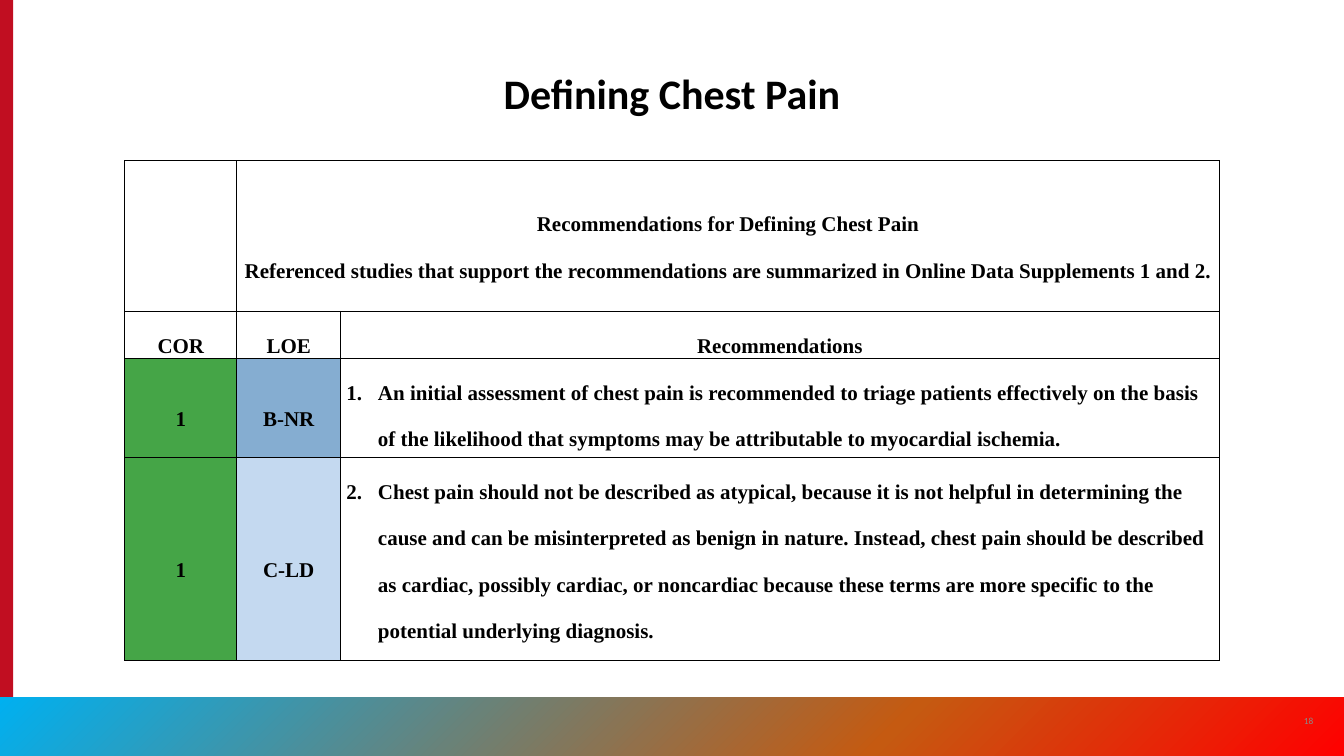
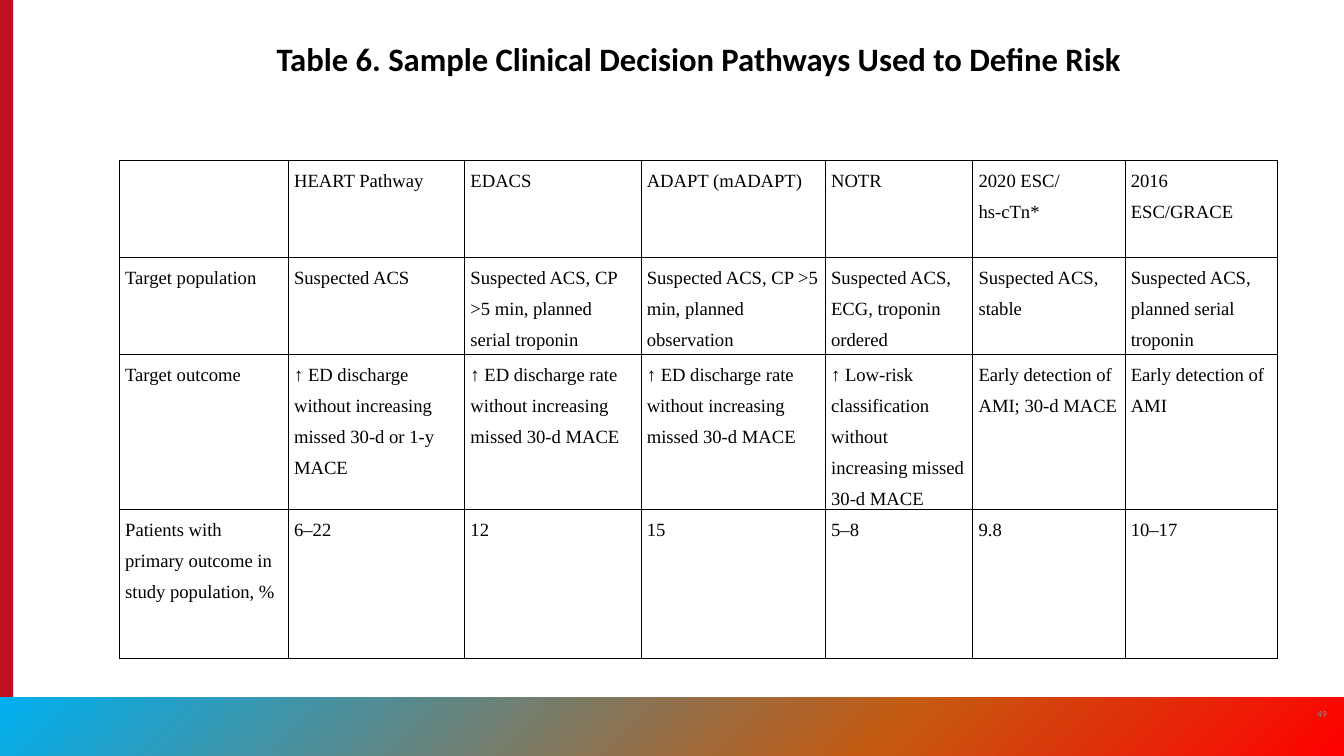
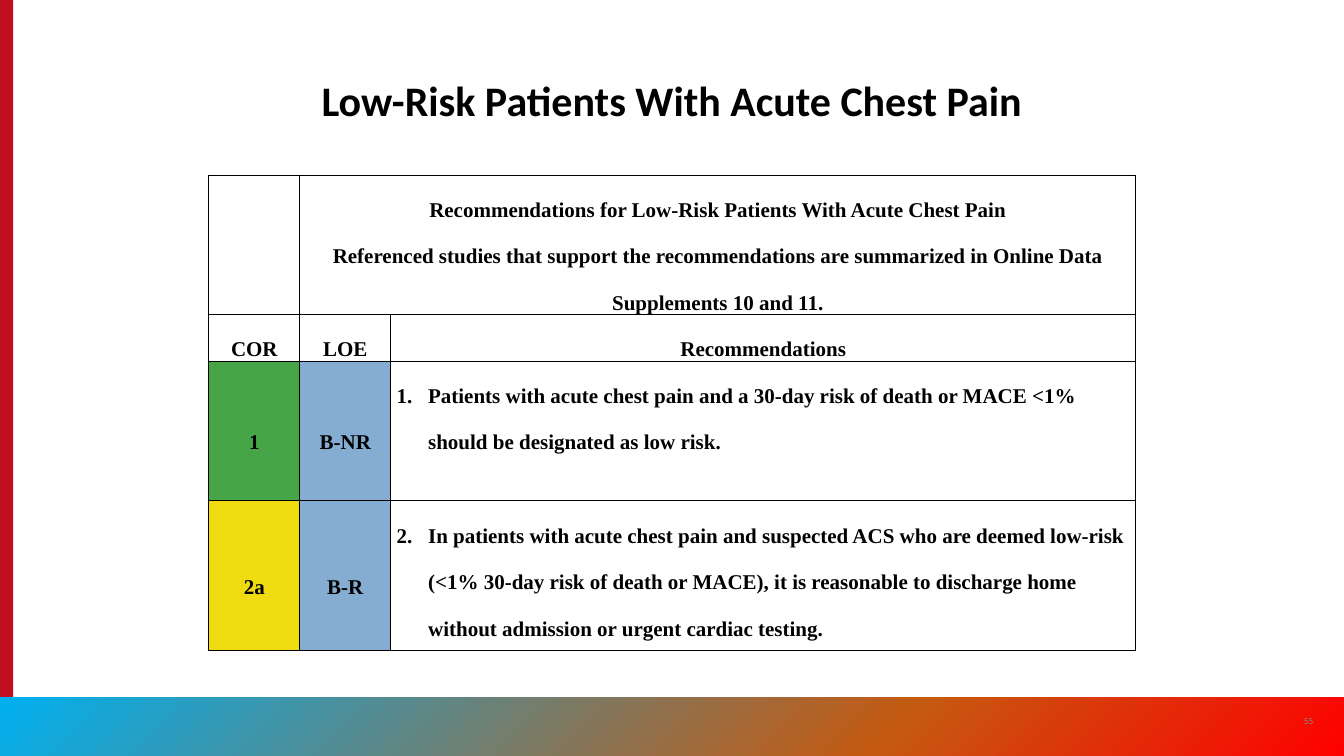
"""Build three clinical guideline slides that share one frame and table style."""
import copy

import pptx
import pptx.dml.color
import pptx.enum.shapes
import pptx.enum.text
import pptx.oxml
import pptx.oxml.ns
import pptx.util

Pt = pptx.util.Pt
ALIGN = pptx.enum.text.PP_ALIGN
ANCHOR = pptx.enum.text.MSO_ANCHOR

SLIDE_WIDTH, SLIDE_HEIGHT = 1152, 648
COLORS = {
    "black": "000000",
    "gray": "8A8B8A",
    "red_bar": "C10E21",
    "band_start": "00B0F0",
    "band_middle": "C55A11",
    "band_end": "FF0000",
    "green": "45A547",
    "yellow": "F0DA10",
    "blue": "85ADD1",
    "light_blue": "C4D9F0",
}
HEADING_FONT, TABLE_FONT = "Calibri", "Times New Roman"
CELL_INSET = 5
NUMBER_INDENT = 27
PAGE_NUMBER_SIZE = 34.5
RECOMMENDATION_LINE, PATHWAY_LINE = 39.9, 26.6

DEFINING_ROWS = [
    ("1", "green", "B-NR", "blue",
     "An initial assessment of chest pain is recommended to triage patients effectively on the basis "
     "of the likelihood that symptoms may be attributable to myocardial ischemia."),
    ("1", "green", "C-LD", "light_blue",
     "Chest pain should not be described as atypical, because it is not helpful in determining the "
     "cause and can be misinterpreted as benign in nature. Instead, chest pain should be described "
     "as cardiac, possibly cardiac, or noncardiac because these terms are more specific to the "
     "potential underlying diagnosis."),
]
LOW_RISK_ROWS = [
    ("1", "green", "B-NR", "blue",
     "Patients with acute chest pain and a 30-day risk of death or MACE <1% should be designated "
     "as low risk."),
    ("2a", "yellow", "B-R", "blue",
     "In patients with acute chest pain and suspected ACS who are deemed low-risk (<1% 30-day risk "
     "of death or MACE), it is reasonable to discharge home without admission or urgent cardiac "
     "testing."),
]
PATHWAY_ROWS = [
    ["", "HEART Pathway", "EDACS", "ADAPT (mADAPT)", "NOTR", "2020 ESC/\nhs-cTn*", "2016 ESC/GRACE"],
    ["Target population", "Suspected ACS", "Suspected ACS, CP >5 min, planned serial troponin",
     "Suspected ACS, CP >5 min, planned observation", "Suspected ACS, ECG, troponin ordered",
     "Suspected ACS, stable", "Suspected ACS, planned serial troponin"],
    ["Target outcome", "↑ ED discharge without increasing missed 30-d or 1-y MACE",
     "↑ ED discharge rate without increasing missed 30-d MACE",
     "↑ ED discharge rate without increasing missed 30-d MACE",
     "↑ Low-risk classification without increasing missed 30-d MACE",
     "Early detection of AMI; 30-d MACE", "Early detection of AMI"],
    ["Patients with primary outcome in study population, %", "6–22", "12", "15", "5–8", "9.8", "10–17"],
]


def rgb(name):
    """Return the named colour."""
    return pptx.dml.color.RGBColor.from_string(COLORS[name])


def write_text(text_frame, text, *, size, font=HEADING_FONT, color="black", bold=False,
               align=ALIGN.CENTER, line_spacing=1.0, number=None):
    """Write one formatted paragraph per line of text, numbered if asked."""
    for index, line in enumerate(text.split("\n")):
        paragraph = text_frame.add_paragraph() if index else text_frame.paragraphs[0]
        paragraph.alignment = align
        paragraph.line_spacing = line_spacing
        if number is not None:
            properties = paragraph._p.get_or_add_pPr()
            properties.set("marL", str(Pt(NUMBER_INDENT)))
            properties.set("indent", str(-Pt(NUMBER_INDENT)))
            numbering = pptx.oxml.ns.qn("a:buAutoNum")
            bullet = properties.makeelement(numbering, {"type": "arabicPeriod", "startAt": str(number)})
            properties.append(bullet)
        run = paragraph.add_run()
        run.text = line
        run.font.name = font
        run.font.size = Pt(size)
        run.font.bold = bold
        run.font.color.rgb = rgb(color)


def add_rectangle(slide, left, top, width, height):
    """Add a rectangle without line or shadow."""
    shape = slide.shapes.add_shape(
        pptx.enum.shapes.MSO_SHAPE.RECTANGLE, Pt(left), Pt(top), Pt(width), Pt(height))
    shape.shadow.inherit = False
    shape.line.fill.background()
    return shape


def move_frame_to_layout(slide, layout):
    """Draw the side bar and gradient band and place them on the layout."""
    side_bar = add_rectangle(slide, 0, 0, 11.2, SLIDE_HEIGHT)
    side_bar.fill.solid()
    side_bar.fill.fore_color.rgb = rgb("red_bar")
    band = add_rectangle(slide, 0, 597.6, SLIDE_WIDTH, 50.4)
    band.fill.gradient()
    band.fill.gradient_angle = 315
    stop_list = band.element.find(".//" + pptx.oxml.ns.qn("a:gsLst"))
    stop_list.insert(1, copy.deepcopy(stop_list[0]))
    stops = [(0, "band_start"), (0.66, "band_middle"), (1, "band_end")]
    for stop, (position, color) in zip(band.fill.gradient_stops, stops):
        stop.position = position
        stop.color.rgb = rgb(color)
    for shape in (side_bar, band):
        layout.element.cSld.spTree.append(shape.element)


def place_title(slide, text, box, size=36):
    """Move the title placeholder to the box and fill it."""
    title = slide.shapes.title
    title.left, title.top, title.width, title.height = (Pt(value) for value in box)
    title.text_frame.word_wrap = True
    title.text_frame.auto_size = pptx.enum.text.MSO_AUTO_SIZE.NONE
    title.text_frame.vertical_anchor = ANCHOR.TOP
    write_text(title.text_frame, text, size=size, bold=True)


def place_page_number(slide, number, left=1104.5, top=600.5):
    """Place the page number in its square."""
    box = slide.shapes.add_textbox(Pt(left), Pt(top), Pt(PAGE_NUMBER_SIZE), Pt(PAGE_NUMBER_SIZE))
    box.text_frame.word_wrap = True
    box.text_frame.vertical_anchor = ANCHOR.MIDDLE
    write_text(box.text_frame, str(number), size=8, color="gray")


def add_grid(slide, left, top, widths, heights):
    """Add an unfilled table with thin black borders."""
    frame = slide.shapes.add_table(
        len(heights), len(widths), Pt(left), Pt(top), Pt(sum(widths)), Pt(sum(heights)))
    table = frame.table
    table.first_row = table.horz_banding = False
    for column, width in zip(table.columns, widths):
        column.width = Pt(width)
    for row, height in zip(table.rows, heights):
        row.height = Pt(height)
    for cell in table.iter_cells():
        cell.margin_left = cell.margin_right = Pt(CELL_INSET)
        cell.margin_top = cell.margin_bottom = 0
        cell.fill.background()
        for index, side in enumerate("LRTB"):
            border = pptx.oxml.parse_xml(
                f'<a:ln{side} {pptx.oxml.ns.nsdecls("a")} w="{Pt(1)}"><a:solidFill>'
                f'<a:srgbClr val="{COLORS["black"]}"/></a:solidFill></a:ln{side}>')
            cell._tc.get_or_add_tcPr().insert(index, border)
    return table


def write_recommendation(cell, text, fill=None, anchor=ANCHOR.TOP, **text_format):
    """Write bold, widely spaced text in a recommendation cell."""
    cell.vertical_anchor = anchor
    if fill:
        cell.fill.solid()
        cell.fill.fore_color.rgb = rgb(fill)
    write_text(cell.text_frame, text, size=18, font=TABLE_FONT, bold=True,
               line_spacing=Pt(RECOMMENDATION_LINE), **text_format)


def add_recommendations(slide, left, top, widths, heights, heading, rows):
    """Add a table of graded recommendations."""
    table = add_grid(slide, left, top, widths, heights)
    table.cell(0, 1).merge(table.cell(0, 2))
    write_recommendation(table.cell(0, 1), heading, anchor=ANCHOR.MIDDLE)
    for column, label in enumerate(("COR", "LOE", "Recommendations")):
        write_recommendation(table.cell(1, column), label)
    for number, (grade, grade_fill, level, level_fill, advice) in enumerate(rows, 1):
        row = number + 1
        write_recommendation(table.cell(row, 0), grade, fill=grade_fill, anchor=ANCHOR.MIDDLE)
        write_recommendation(table.cell(row, 1), level, fill=level_fill, anchor=ANCHOR.MIDDLE)
        write_recommendation(table.cell(row, 2), advice, align=ALIGN.LEFT, number=number)


def add_pathways(slide, left, top, widths, heights, rows):
    """Add the comparison table of decision pathways."""
    table = add_grid(slide, left, top, widths, heights)
    for row, texts in enumerate(rows):
        for column, text in enumerate(texts):
            if text:
                write_text(table.cell(row, column).text_frame, text, size=16, font=TABLE_FONT,
                           align=ALIGN.LEFT, line_spacing=Pt(PATHWAY_LINE))


def build_defining_slide(slide):
    """Build the slide that defines chest pain."""
    place_title(slide, "Defining Chest Pain", (69, 54, 1014, 45))
    place_page_number(slide, 18)
    add_recommendations(
        slide, 107, 138, [96, 89, 753], [129, RECOMMENDATION_LINE, 85, 174],
        "Recommendations for Defining Chest Pain\nReferenced studies that support the "
        "recommendations are summarized in Online Data Supplements 1 and 2.", DEFINING_ROWS)


def build_pathways_slide(slide):
    """Build the slide that compares decision pathways."""
    place_title(slide, "Table 6. Sample Clinical Decision Pathways Used to Define Risk",
                (205.2, 30, 787, 76), size=28)
    place_page_number(slide, 49, left=1116, top=594.5)
    add_pathways(slide, 102.3, 138, [144.8, 151.2, 151.2, 158, 126.4, 130.5, 131],
                 [83, 83, 5 * PATHWAY_LINE, 127.5], PATHWAY_ROWS)


def build_low_risk_slide(slide):
    """Build the slide on low-risk patients."""
    place_title(slide, "Low-Risk Patients With Acute Chest Pain", (165, 60, 822, 45))
    place_page_number(slide, 55)
    add_recommendations(
        slide, 179, 150, [78, 78, 638.5],
        [3 * RECOMMENDATION_LINE, RECOMMENDATION_LINE, 3 * RECOMMENDATION_LINE, 128],
        "Recommendations for Low-Risk Patients With Acute Chest Pain\nReferenced studies that support "
        "the recommendations are summarized in Online Data Supplements 10 and 11.", LOW_RISK_ROWS)


def main():
    """Create and save the presentation."""
    presentation = pptx.Presentation()
    presentation.slide_width, presentation.slide_height = Pt(SLIDE_WIDTH), Pt(SLIDE_HEIGHT)
    layout = presentation.slide_layouts.get_by_name("Title Only")
    builders = (build_defining_slide, build_pathways_slide, build_low_risk_slide)
    slides = [presentation.slides.add_slide(layout) for builder in builders]
    move_frame_to_layout(slides[0], layout)
    for builder, slide in zip(builders, slides):
        builder(slide)
    presentation.save("out.pptx")


if __name__ == "__main__":
    main()
